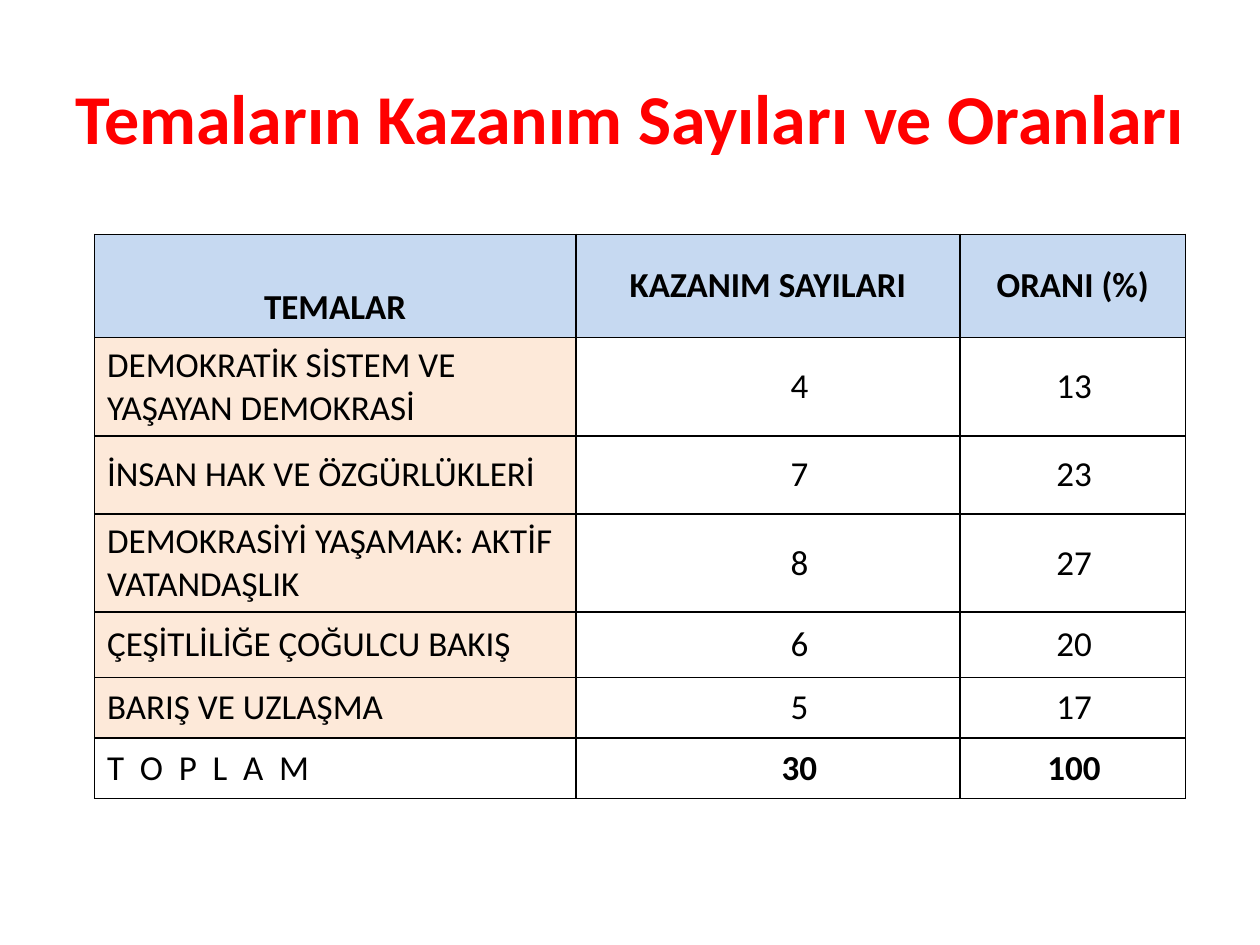
import pptx
import pptx.dml.color
import pptx.enum.text
import pptx.oxml
import pptx.oxml.ns
import pptx.util

COLORS = {"title": "FF0000", "text": "000000", "border": "000000",
          "header": "C6D9F1", "theme": "FDE9D9"}
FONT = "Calibri"
COLUMNS = [3.82, 3.05, 1.79]
ROWS = [0.82, 0.78, 0.62, 0.78, 0.52, 0.48, 0.48]
HEADINGS = ["TEMALAR", "KAZANIM SAYILARI", "ORANI (%)"]
THEMES = [
    ("DEMOKRATİK SİSTEM VE YAŞAYAN DEMOKRASİ", 4, 13),
    ("İNSAN HAK VE ÖZGÜRLÜKLERİ", 7, 23),
    ("DEMOKRASİYİ YAŞAMAK: AKTİF VATANDAŞLIK", 8, 27),
    ("ÇEŞİTLİLİĞE ÇOĞULCU BAKIŞ", 6, 20),
    ("BARIŞ VE UZLAŞMA", 5, 17),
]
TOTAL = ("T O P L A M", 30, 100)
Inches = pptx.util.Inches
ALIGN = pptx.enum.text.PP_ALIGN
MIDDLE = pptx.enum.text.MSO_ANCHOR.MIDDLE


def style(paragraph, size, color, bold, align):
    paragraph.alignment = align
    font = paragraph.font
    font.name, font.size, font.bold = FONT, pptx.util.Pt(size), bold
    font.color.rgb = pptx.dml.color.RGBColor.from_string(COLORS[color])


def add_title(slide, left, top, width, height):
    frame = slide.shapes.add_textbox(left, top, width, height).text_frame
    frame.word_wrap = True
    frame.vertical_anchor = MIDDLE
    title = frame.paragraphs[0]
    title.text = "Temaların Kazanım Sayıları ve Oranları"
    style(title, 40, "title", True, ALIGN.CENTER)


def add_borders(cell):
    properties = cell._tc.get_or_add_tcPr()
    for position, side in enumerate(("lnL", "lnR", "lnT", "lnB")):
        properties.insert(position, pptx.oxml.parse_xml(
            f'<a:{side} {pptx.oxml.ns.nsdecls("a")} w="12700"><a:solidFill>'
            f'<a:srgbClr val="{COLORS["border"]}"/></a:solidFill></a:{side}>'))


def fill_cell(cell, value, fill=None, bold=False, align=ALIGN.LEFT):
    cell.vertical_anchor = MIDDLE
    if fill:
        cell.fill.solid()
        cell.fill.fore_color.rgb = pptx.dml.color.RGBColor.from_string(COLORS[fill])
    else:
        cell.fill.background()
    add_borders(cell)
    paragraph = cell.text_frame.paragraphs[0]
    paragraph.text = str(value)
    style(paragraph, 20, "text", bold, align)


def fill_number(cell, value, indent, bold):
    fill_cell(cell, value, bold=bold, align=ALIGN.CENTER)
    cell.margin_left = cell.margin_right = Inches(0.07)
    cell.margin_top = cell.margin_bottom = 0
    cell.text_frame.paragraphs[0]._p.get_or_add_pPr().set("marL", str(Inches(indent)))


def add_theme_table(slide, left, top, width, height):
    table = slide.shapes.add_table(len(ROWS), len(COLUMNS), left, top, width, height).table
    table.first_row = table.horz_banding = False
    for column, share in zip(table.columns, COLUMNS):
        column.width = int(width * share / sum(COLUMNS))
    for row, share in zip(table.rows, ROWS):
        row.height = int(height * share / sum(ROWS))

    for index, heading in enumerate(HEADINGS):
        fill_cell(table.cell(0, index), heading, "header", True, ALIGN.CENTER)
    table.cell(0, 0).margin_top = Inches(0.39)

    for index, (theme, count, percent) in enumerate(THEMES + [TOTAL], 1):
        is_total = index > len(THEMES)
        fill_cell(table.cell(index, 0), theme, None if is_total else "theme")
        fill_number(table.cell(index, 1), count, 0.5, is_total)
        fill_number(table.cell(index, 2), percent, 0.02, is_total)
    total_label = table.cell(len(ROWS) - 1, 0).text_frame.paragraphs[0].runs[0]
    total_label._r.get_or_add_rPr().set("spc", "225")


def main():
    deck = pptx.Presentation()
    deck.slide_width, deck.slide_height = Inches(10), Inches(7.5)
    slide = deck.slides.add_slide(deck.slide_layouts[6])
    width, height = deck.slide_width, deck.slide_height
    add_title(slide, int(width * 0.05), int(height * 0.04),
              int(width * 0.9), int(height / 6))
    add_theme_table(slide, Inches(0.75), Inches(1.86),
                    Inches(sum(COLUMNS)), Inches(sum(ROWS)))
    deck.save("out.pptx")


if __name__ == "__main__":
    main()
